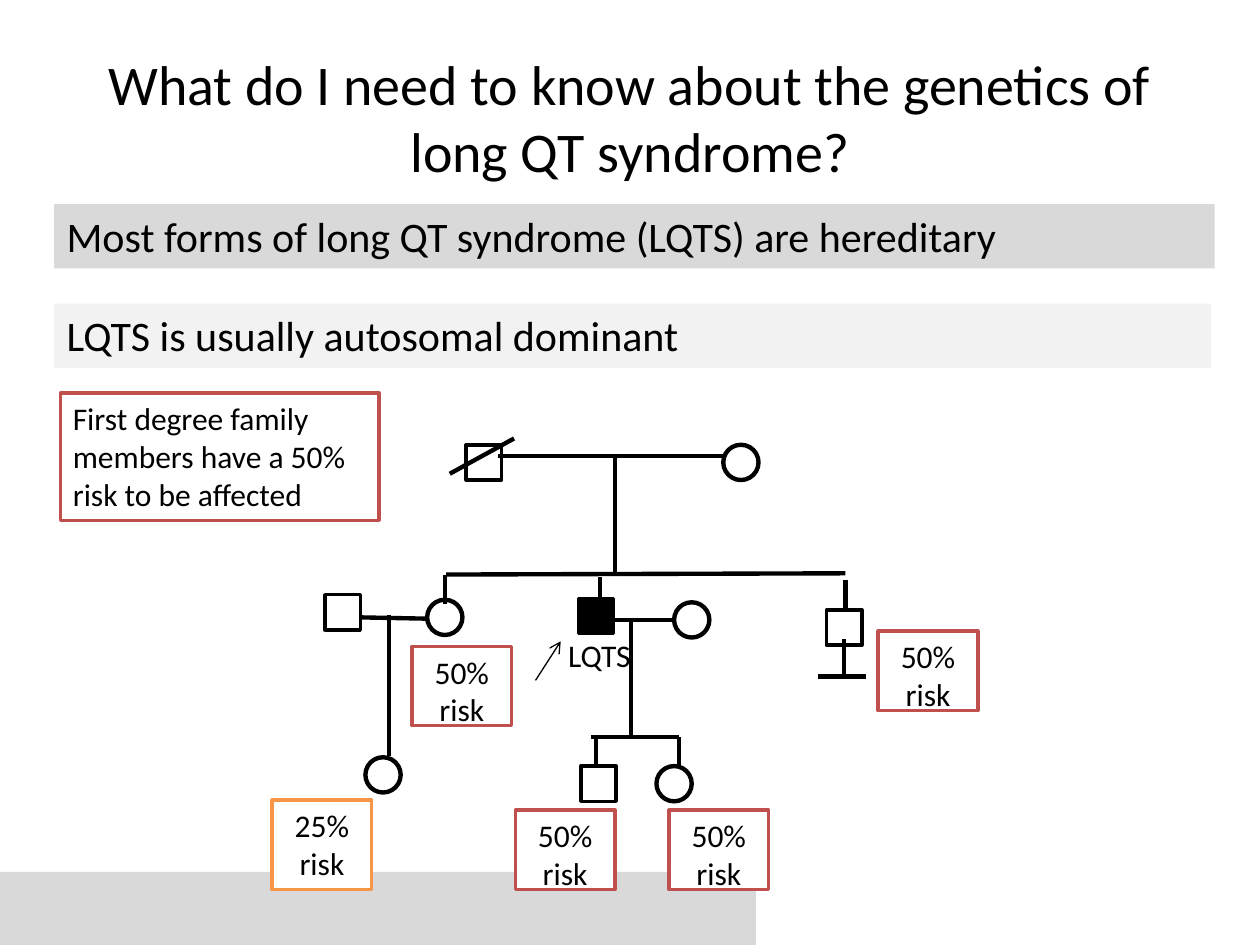
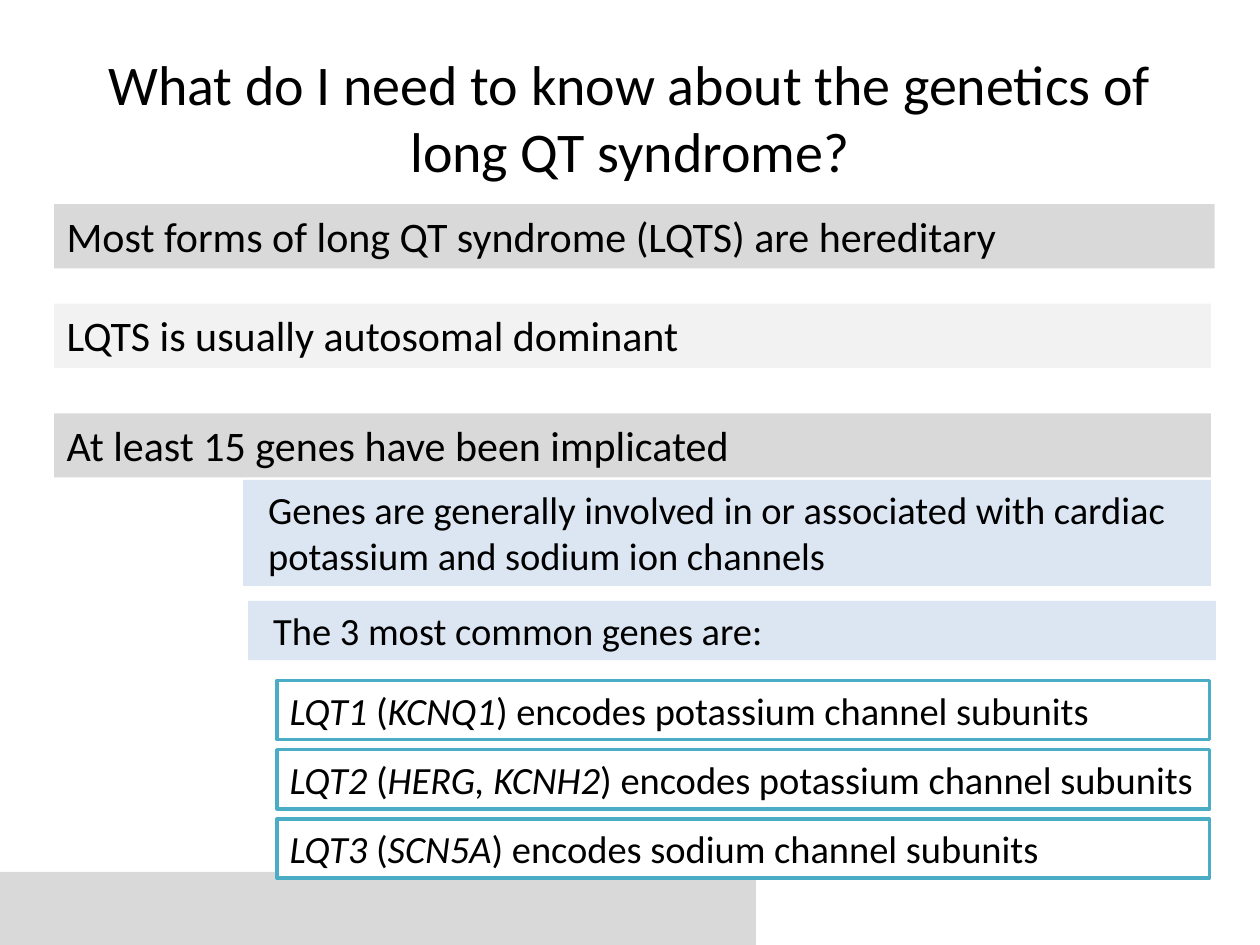
from dataclasses import dataclass

from lxml.etree import SubElement
from pptx import Presentation
from pptx.dml.color import RGBColor
from pptx.enum.shapes import MSO_CONNECTOR, MSO_SHAPE
from pptx.enum.text import MSO_ANCHOR, PP_ALIGN
from pptx.oxml.ns import qn
from pptx.util import Pt

PX = 9144  # EMU in one px, 100 px to the inch


@dataclass(frozen=True)
class Theme:
    face: str = "Calibri"
    ink: str = "000000"
    paper: str = "FFFFFF"
    grey: str = "D9D9D9"
    pale: str = "F2F2F2"
    blue: str = "DCE6F2"
    red: str = "C0504D"
    orange: str = "F79646"
    teal: str = "4BACC6"
    head: int = 32
    point: int = 24
    detail: int = 22
    note: int = 18
    edge: float = 2
    stroke: float = 2.5
    thin: float = 0.75


def px(*vals):
    return [val * PX for val in vals]


def put(item, **vals):
    for key, val in vals.items():
        setattr(item, key, val)


class Deck:
    def __init__(self, theme):
        self.theme = theme
        self.prs = Presentation()
        put(self.prs, slide_width=1000 * PX, slide_height=750 * PX)
        self.layout = self.prs.slide_layouts[5]
        self.slide = None

    def start(self, title):
        """Add a slide with its title; the first one gives the layout its foot."""
        first = self.slide is None
        self.slide = self.prs.slides.add_slide(self.layout)
        if first:
            foot = self.shape((0, 692, 600, 58), fill=self.theme.grey).element
            foot.nvSpPr.cNvPr.set("id", "90")
            self.layout.shapes.element.insert(2, foot)
        head = self.slide.shapes.title
        left, top, width, height = px(50, 30, 900, 125)
        put(head, left=left, top=top, width=width, height=height)
        self.text(head, title, self.theme.head, PP_ALIGN.CENTER, MSO_ANCHOR.MIDDLE)

    def text(self, item, words, size, align=PP_ALIGN.LEFT, anchor=MSO_ANCHOR.TOP, indent=0):
        """Fill a shape with words; parts between asterisks are italic."""
        frame = item.text_frame
        put(frame, word_wrap=True, vertical_anchor=anchor)
        para = frame.paragraphs[0]
        para.alignment = align
        if indent:
            para._p.get_or_add_pPr().set("marL", str(indent * PX))
        for num, part in enumerate(words.split("*")):
            if part:
                run = para.add_run()
                run.text = part
                put(run.font, name=self.theme.face, size=Pt(size))
                run.font.color.rgb = RGBColor.from_string(self.theme.ink)
                if num % 2:
                    run.font.italic = True

    def shape(self, box, kind=MSO_SHAPE.RECTANGLE, fill=None, line=None, width=0):
        item = self.slide.shapes.add_shape(kind, *px(*box))
        item.shadow.inherit = False
        for part, tint in ((item.fill, fill), (item.line.fill, line)):
            if tint:
                part.solid()
                part.fore_color.rgb = RGBColor.from_string(tint)
            else:
                part.background()
        if line:
            item.line.width = Pt(width)
        return item

    def band(self, box, words, fill, size, indent=0):
        self.text(self.shape(box, fill=fill), words, size, indent=indent)

    def card(self, box, words, line, size, align=PP_ALIGN.LEFT):
        item = self.shape(box, fill=self.theme.paper, line=line, width=self.theme.edge)
        self.text(item, words, size, align)

    def label(self, box, words, size):
        self.text(self.slide.shapes.add_textbox(*px(*box)), words, size)

    def male(self, left, top, fill=None):
        self.shape((left, top, 28, 28), fill=fill, line=self.theme.ink, width=self.theme.edge)

    def female(self, left, top, fill=None):
        self.shape((left, top, 28, 28), MSO_SHAPE.OVAL, fill, self.theme.ink, self.theme.stroke)

    def line(self, ends, width, arrow=False):
        item = self.slide.shapes.add_connector(MSO_CONNECTOR.STRAIGHT, *px(*ends))
        item.line.color.rgb = RGBColor.from_string(self.theme.ink)
        item.line.width = Pt(width)
        props = item.element.spPr
        if arrow:
            SubElement(props.find(qn("a:ln")), qn("a:tailEnd"), type="arrow")
        SubElement(props, qn("a:effectLst"))

    def topic(self):
        """Start a slide with the title and the two points that both share."""
        look = self.theme
        self.start("What do I need to know about the genetics of long QT syndrome?")
        self.band((43, 162, 921, 51), "Most forms of long QT syndrome (LQTS) are hereditary",
                  look.grey, look.point)
        self.band((43, 241, 918, 51), "LQTS is usually autosomal dominant", look.pale, look.point)


def family(deck):
    look = deck.theme
    deck.topic()

    # Lines of descent
    for ends in (
        (395, 362, 577, 362), (488, 362, 488, 455),  # grandparents
        (354, 456, 671, 455), (353, 456, 353, 479),  # their children
        (476, 458, 476, 480), (671, 460, 671, 483),
        (287, 490, 338, 491), (309, 488, 309, 600),  # daughter's family
        (484, 492, 535, 492), (501, 491, 501, 585),  # affected son's family
        (469, 585, 539, 585), (473, 585, 473, 608), (539, 585, 539, 608),
        (670, 507, 670, 539), (687, 537, 649, 537),  # son without children
        (408, 348, 357, 376),  # deceased
    ):
        deck.line(ends, look.stroke)

    # People
    for left, top in ((370, 353), (258, 472), (656, 484), (461, 608)):
        deck.male(left, top)
    deck.male(459, 475, look.ink)
    for left, top in ((339, 476), (535, 478), (521, 608)):
        deck.female(left, top)
    for left, top in ((574, 353), (290, 601)):
        deck.female(left, top, look.paper)

    # Index patient
    deck.label((441, 500, 91, 40), "LQTS", look.note)
    deck.line((425, 540, 445, 509), look.thin, arrow=True)

    # Risks
    for left, top in ((531, 643), (697, 501), (409, 643), (327, 513)):
        deck.card((left, top, 79, 63), "50% risk", look.red, look.note, PP_ALIGN.CENTER)
    deck.card((216, 635, 79, 71), "25% risk", look.orange, look.note, PP_ALIGN.CENTER)
    deck.card((48, 312, 253, 101), "First degree family members have a 50% risk to be affected",
              look.red, look.note)


def genes(deck):
    look = deck.theme
    deck.topic()
    deck.band((43, 328, 918, 51), "At least 15 genes have been implicated", look.grey, look.point)
    deck.band((193, 381, 768, 84), "Genes are generally involved in or associated with cardiac "
              "potassium and sodium ion channels", look.blue, look.detail, indent=10)
    deck.band((197, 477, 768, 47), "The 3 most common genes are:", look.blue, look.detail, indent=10)

    # Common genes
    for row, (kind, gene, ion) in enumerate((
        ("LQT1", "KCNQ1", "potassium"),
        ("LQT2", "HERG, KCNH2", "potassium"),
        ("LQT3", "SCN5A", "sodium"),
    )):
        deck.card((220, 540 + row * 55, 740, 47),
                  f"*{kind} *(*{gene}*) encodes {ion} channel subunits", look.teal, look.detail)


def main():
    deck = Deck(Theme())
    family(deck)
    genes(deck)
    deck.prs.save("out.pptx")


if __name__ == "__main__":
    main()
